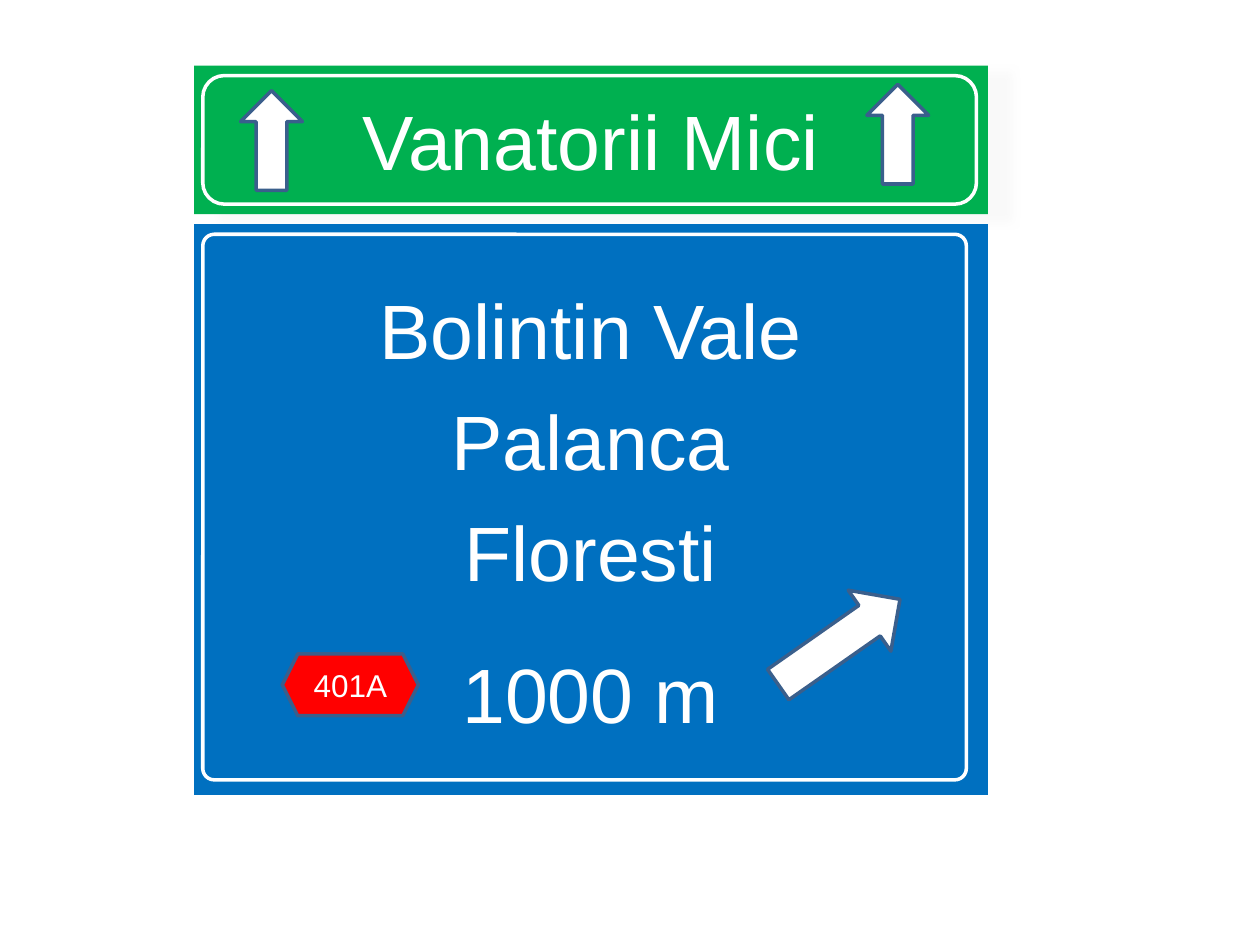
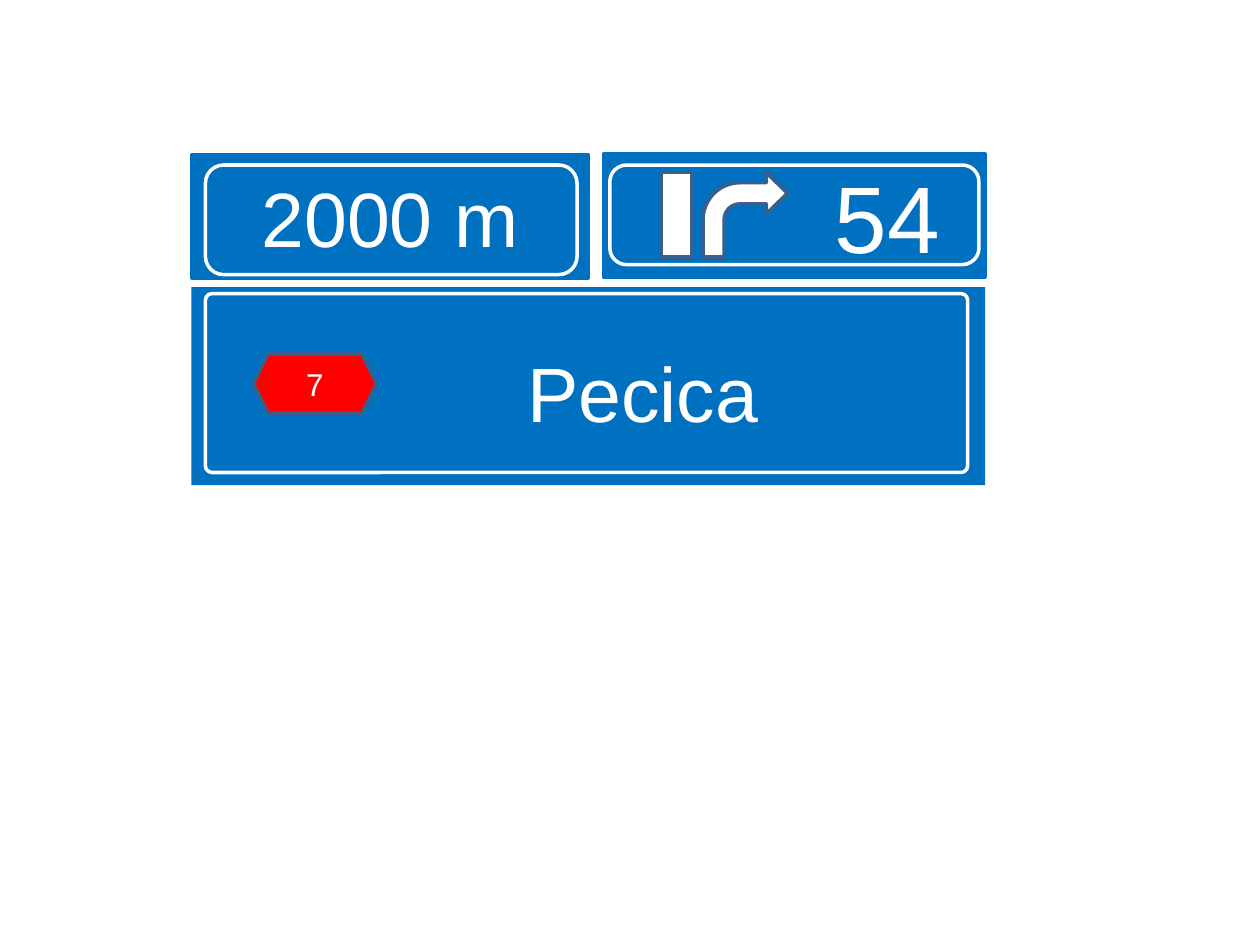
from lxml import etree
from pptx import Presentation
from pptx.dml.color import RGBColor
from pptx.enum.shapes import MSO_SHAPE
from pptx.enum.text import MSO_ANCHOR, PP_ALIGN
from pptx.oxml.ns import qn
from pptx.util import Pt

EMU_PER_PX = 9144  # 100 px to the inch
RECT, ROUND_RECT = MSO_SHAPE.RECTANGLE, MSO_SHAPE.ROUNDED_RECTANGLE
UP, RIGHT, BENT = MSO_SHAPE.UP_ARROW, MSO_SHAPE.RIGHT_ARROW, MSO_SHAPE.BENT_ARROW
HEXAGON = MSO_SHAPE.HEXAGON
MIDDLE, TOP, CENTER = MSO_ANCHOR.MIDDLE, MSO_ANCHOR.TOP, PP_ALIGN.CENTER

FONT = "Arial"
COLORS = {
    "green": "00B050",
    "blue": "0070C0",
    "red": "FF0000",
    "white": "FFFFFF",
    "outline": "3A5F8C",
    "shadow": "F2F2F2",
}
PLACE_SIZE, EXIT_SIZE, ROAD_SIZE = 44, 54, 18
EVEN_INSETS = (10, 5, 10, 5)


def px(value):
    return value * EMU_PER_PX


def color(name):
    return RGBColor.from_string(COLORS[name])


def inside(box, left, top, width, height):
    """Turn a place relative to box into a place on the page."""
    return box[0] + left, box[1] + top, width, height


def add_shape(page, kind, box, fill=None, line=None, adjustments=()):
    shape = page.shapes.add_shape(kind, *map(px, box))
    shape.shadow.inherit = False
    for index, value in enumerate(adjustments):
        shape.adjustments[index] = value
    if fill:
        shape.fill.solid()
        shape.fill.fore_color.rgb = color(fill)
    else:
        shape.fill.background()
    if line:
        shape.line.color.rgb = color(line)
        shape.line.width = Pt(2)
    else:
        shape.line.fill.background()
    return shape


def write(shape, lines, size, insets=EVEN_INSETS, anchor=MIDDLE, gaps=()):
    """Fill shape with centred lines; gaps are the points above each line."""
    frame = shape.text_frame
    frame.word_wrap = True
    frame.vertical_anchor = anchor
    (frame.margin_left, frame.margin_top,
     frame.margin_right, frame.margin_bottom) = map(px, insets)
    frame.text = "\n".join(lines)
    for para in frame.paragraphs:
        para.alignment = CENTER
        for span in para.runs:
            span.font.name = FONT
            span.font.size = Pt(size)
            span.font.color.rgb = color("white")
    for para, gap in zip(frame.paragraphs, gaps):
        para.space_before = Pt(gap)


def add_side_shadow(shape):
    effects = shape._element.spPr.find(qn("a:effectLst"))
    shadow = etree.SubElement(effects, qn("a:outerShdw"), blurRad=str(Pt(5)),
                              dist=str(Pt(14)), dir="900000", rotWithShape="0")
    tint = etree.SubElement(shadow, qn("a:srgbClr"), val=COLORS["shadow"])
    etree.SubElement(tint, qn("a:alpha"), val="40000")


def add_border(page, box, rounding=0.167):
    add_shape(page, ROUND_RECT, box, line="white", adjustments=[rounding])


def add_arrow(page, kind, box, adjustments=()):
    return add_shape(page, kind, box, "white", "outline", adjustments)


def add_road_badge(page, box, road):
    badge = add_shape(page, HEXAGON, box, "red", "outline")
    write(badge, [road], ROAD_SIZE)


def add_small_panel(page, box, text, size, insets=EVEN_INSETS):
    panel = add_shape(page, ROUND_RECT, box, "blue", "blue", [0])
    write(panel, [text], size, insets)


def ahead_panel(page, box, place):
    panel = add_shape(page, RECT, box, "green")
    add_side_shadow(panel)
    write(panel, [place], PLACE_SIZE)
    for left, top in ((37, 20), (534, 15)):
        add_arrow(page, UP, inside(box, left, top, 49, 79))
    add_border(page, inside(box, 7, 8, 614, 102))


def exit_panel(page, box, places, distance, road):
    panel = add_shape(page, RECT, box, "blue")
    gaps = [0] + [10.8] * (len(places) - 1) + [28]
    write(panel, places + [distance], PLACE_SIZE, (10, 46, 10, 24), TOP, gaps)
    arrow = add_arrow(page, RIGHT, inside(box, 453, 302, 118, 59))
    arrow.rotation = 325
    add_road_badge(page, inside(box, 70, 341, 108, 49), road)
    add_border(page, inside(box, 7, 8, 606, 433), 0.021)


def distance_panel(page, box, distance):
    add_small_panel(page, box, distance, PLACE_SIZE)
    add_border(page, inside(box, 11, 8, 295, 87))


def exit_number_panel(page, box, number):
    add_small_panel(page, box, number, EXIT_SIZE, (157, 5, 10, 5))
    add_arrow(page, RECT, inside(box, 46, 15, 24, 67))
    add_arrow(page, BENT, inside(box, 79, 15, 67, 67),
              [0.25, 0.245, 0.25, 0.438])
    add_border(page, inside(box, 5, 9, 293, 79))


def destination_panel(page, box, place, road):
    panel = add_shape(page, RECT, box, "blue")
    write(panel, [place], PLACE_SIZE, (96, 46, 10, 24), TOP)
    add_border(page, inside(box, 11, 5, 605, 142), 0.037)
    add_road_badge(page, inside(box, 49, 53, 98, 47), road)


def main():
    deck = Presentation()
    deck.slide_width, deck.slide_height = px(1000), px(750)
    blank = deck.slide_layouts[6]

    page = deck.slides.add_slide(blank)
    ahead_panel(page, (154, 52, 630, 118), "Vanatorii Mici")
    exit_panel(page, (154, 178, 630, 453),
               ["Bolintin Vale", "Palanca", "Floresti"], "1000 m", "401A")

    page = deck.slides.add_slide(blank)
    destination_panel(page, (152, 228, 630, 157), "Pecica", "7")
    exit_number_panel(page, (479, 122, 303, 98), "54")
    distance_panel(page, (152, 123, 315, 98), "2000 m")

    deck.save("out.pptx")


if __name__ == "__main__":
    main()
